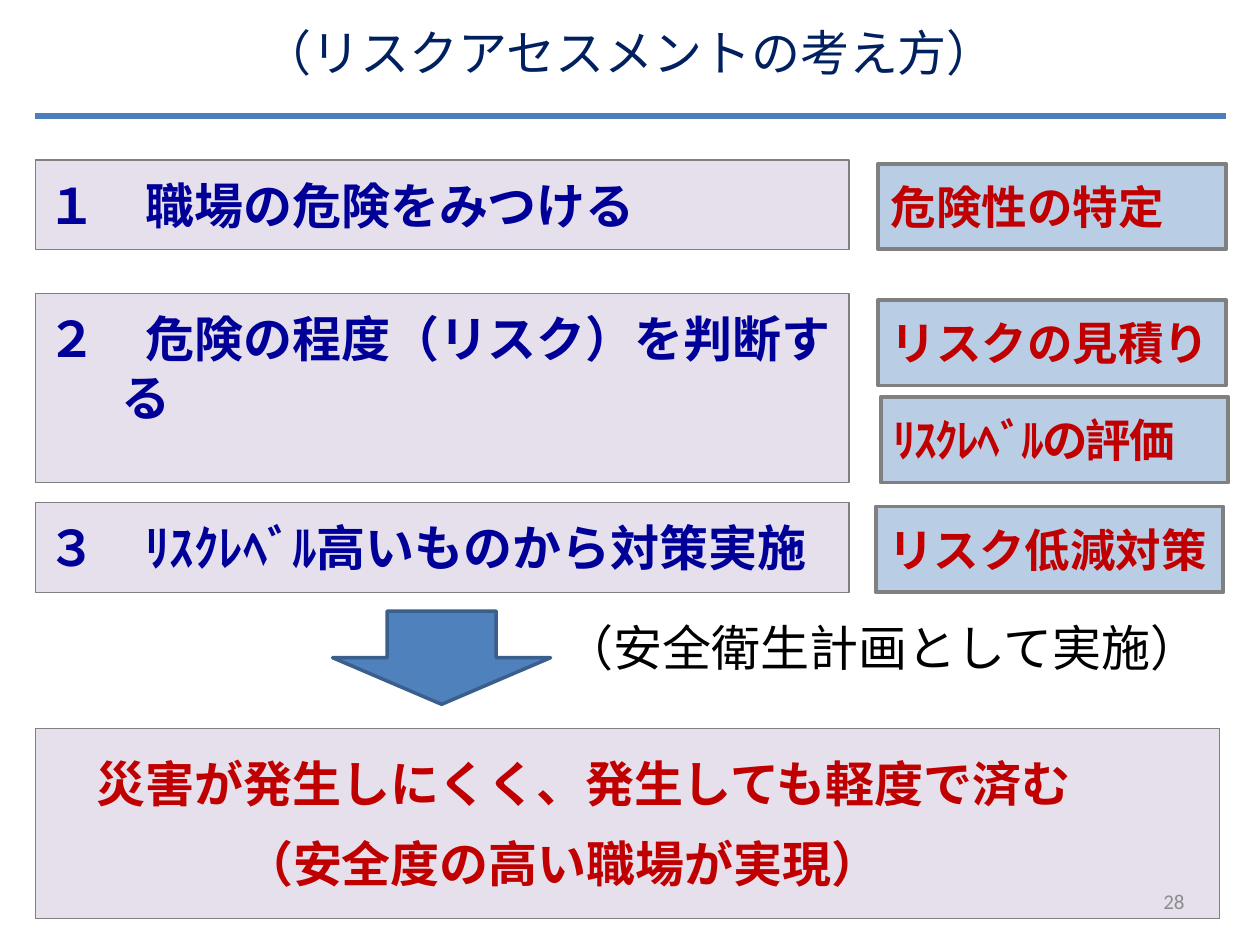
"""Build the slide on the idea behind risk assessment."""
import pptx
import pptx.dml.color
import pptx.enum.shapes
import pptx.enum.text
import pptx.oxml.ns
import pptx.util
from lxml import etree

RGBColor = pptx.dml.color.RGBColor
Inches, Pt = pptx.util.Inches, pptx.util.Pt
Align, Anchor = pptx.enum.text.PP_ALIGN, pptx.enum.text.MSO_ANCHOR
Preset = pptx.enum.shapes.MSO_SHAPE

TITLE_NAVY = RGBColor(0x00, 0x20, 0x60)
STEP_BLUE = RGBColor(0x00, 0x00, 0x99)
RED = RGBColor(0xC0, 0x00, 0x00)
BLACK = RGBColor(0x00, 0x00, 0x00)
NUMBER_GRAY = RGBColor(0x8C, 0x8C, 0x8C)
LILAC = RGBColor(0xE6, 0xE0, 0xEC)
PALE_BLUE = RGBColor(0xB9, 0xCD, 0xE5)
BORDER_GRAY = RGBColor(0x80, 0x80, 0x80)
ARROW_BLUE = RGBColor(0x4F, 0x81, 0xBD)
ARROW_EDGE = RGBColor(0x3A, 0x5F, 0x8C)
RULE_BLUE = RGBColor(0x4B, 0x7E, 0xBC)

LEFT, STEP_WIDTH, TERM_WIDTH, TERM_HEIGHT = 0.28, 6.46, 2.76, 0.68
HANGING = 0.59
TITLE = "（リスクアセスメントの考え方）"
STEPS = [
    ("１　職場の危険をみつける", 1.27, 0.71),
    ("２　危険の程度（リスク）を判断する", 2.33, 1.5),
    ("３　ﾘｽｸﾚﾍﾞﾙ高いものから対策実施", 3.99, 0.71),
]
TERMS = [
    ("危険性の特定", 6.97, 1.3, 0),
    ("リスクの見積り", 6.97, 2.38, 0),
    ("ﾘｽｸﾚﾍﾞﾙの評価", 6.99, 3.15, -100),
    ("リスク低減対策", 6.95, 4.02, 0),
]
RESULTS = [("災害が発生しにくく、発生しても軽度で済む", 0.39, 18),
           ("（安全度の高い職場が実現）", 1.56, 12)]
PLAN_NOTE = "（安全衛生計画として実施）"
PAGE_NUMBER = "28"


def apply(target, **values):
    for name, value in values.items():
        setattr(target, name, value)


def place(shape, *box):
    apply(shape, **dict(zip(("left", "top", "width", "height"), map(Inches, box))))


def frame_text(shape, inset_x=0.1, inset_y=0.05, anchor=Anchor.TOP):
    frame = shape.text_frame
    apply(frame, word_wrap=True, auto_size=pptx.enum.text.MSO_AUTO_SIZE.NONE,
          vertical_anchor=anchor,
          margin_left=Inches(inset_x), margin_right=Inches(inset_x),
          margin_top=Inches(inset_y), margin_bottom=Inches(inset_y))
    return frame


def write(paragraph, text, size, color, font="Arial", bold=False, align=Align.LEFT,
          before=0, margin=0, indent=0, spacing=0):
    apply(paragraph, alignment=align, space_before=Pt(before))
    properties = paragraph._p.get_or_add_pPr()
    properties.set("marL", str(Inches(margin)))
    properties.set("indent", str(Inches(indent)))
    run = paragraph.add_run()
    run.text = text
    apply(run.font, name=font, size=Pt(size), bold=bold)
    run.font.color.rgb = color
    if spacing:
        run.font._element.set("spc", str(spacing))


def add_block(slide, preset, box, fill, edge, edge_width):
    shape = slide.shapes.add_shape(preset, *map(Inches, box))
    shape.shadow.inherit = False
    shape.fill.solid()
    shape.fill.fore_color.rgb = fill
    shape.line.color.rgb = edge
    shape.line.width = Pt(edge_width)
    return shape


def add_label(slide, text, box, fill, edge_width, size, color, spacing=0):
    shape = add_block(slide, Preset.RECTANGLE, box, fill, BORDER_GRAY, edge_width)
    write(frame_text(shape, inset_y=0.12).paragraphs[0], text, size, color, bold=True,
          before=6, margin=HANGING, indent=-HANGING, spacing=spacing)


def main():
    presentation = pptx.Presentation()
    apply(presentation, slide_width=Inches(10), slide_height=Inches(7.5))
    slide = presentation.slides.add_slide(presentation.slide_layouts[5])

    title = slide.shapes.title
    place(title, 0.27, 0.13, 9.45, 0.55)
    write(frame_text(title).paragraphs[0], TITLE, 28, TITLE_NAVY, "Calibri",
          align=Align.CENTER, before=5.6, margin=0.38, indent=-0.38)

    rule = slide.shapes.add_connector(
        pptx.enum.shapes.MSO_CONNECTOR.STRAIGHT,
        *map(Inches, (LEFT, 0.92, 9.73, 0.92)))
    rule.line.color.rgb = RULE_BLUE
    rule.line.width = Pt(3)
    etree.SubElement(rule._element.spPr, pptx.oxml.ns.qn("a:effectLst"))

    for text, top, height in STEPS:
        add_label(slide, text, (LEFT, top, STEP_WIDTH, height), LILAC, 0.75, 28, STEP_BLUE)
    for text, left, top, spacing in TERMS:
        add_label(slide, text, (left, top, TERM_WIDTH, TERM_HEIGHT), PALE_BLUE, 2.25, 26,
                  RED, spacing)

    add_block(slide, Preset.DOWN_ARROW, (2.64, 4.85, 1.73, 0.74), ARROW_BLUE, ARROW_EDGE, 2)
    note = slide.shapes.add_textbox(*map(Inches, (4.32, 4.85, 5.36, 0.55)))
    write(frame_text(note, inset_x=0.04).paragraphs[0], PLAN_NOTE, 28, BLACK,
          align=Align.CENTER, before=5.6, margin=0.38, indent=-0.38)

    result = add_block(slide, Preset.RECTANGLE, (LEFT, 5.78, 9.4, 1.51), LILAC,
                       BORDER_GRAY, 0.75)
    frame = frame_text(result, inset_y=0.2)
    for index, (text, margin, before) in enumerate(RESULTS):
        paragraph = frame.add_paragraph() if index else frame.paragraphs[0]
        write(paragraph, text, 28, RED, bold=True, before=before, margin=margin)

    number = slide.shapes.add_textbox(*map(Inches, (7.17, 6.95, 2.33, 0.4)))
    write(frame_text(number, anchor=Anchor.MIDDLE).paragraphs[0], PAGE_NUMBER, 12,
          NUMBER_GRAY, "Calibri", align=Align.RIGHT)

    presentation.save("out.pptx")


if __name__ == "__main__":
    main()
